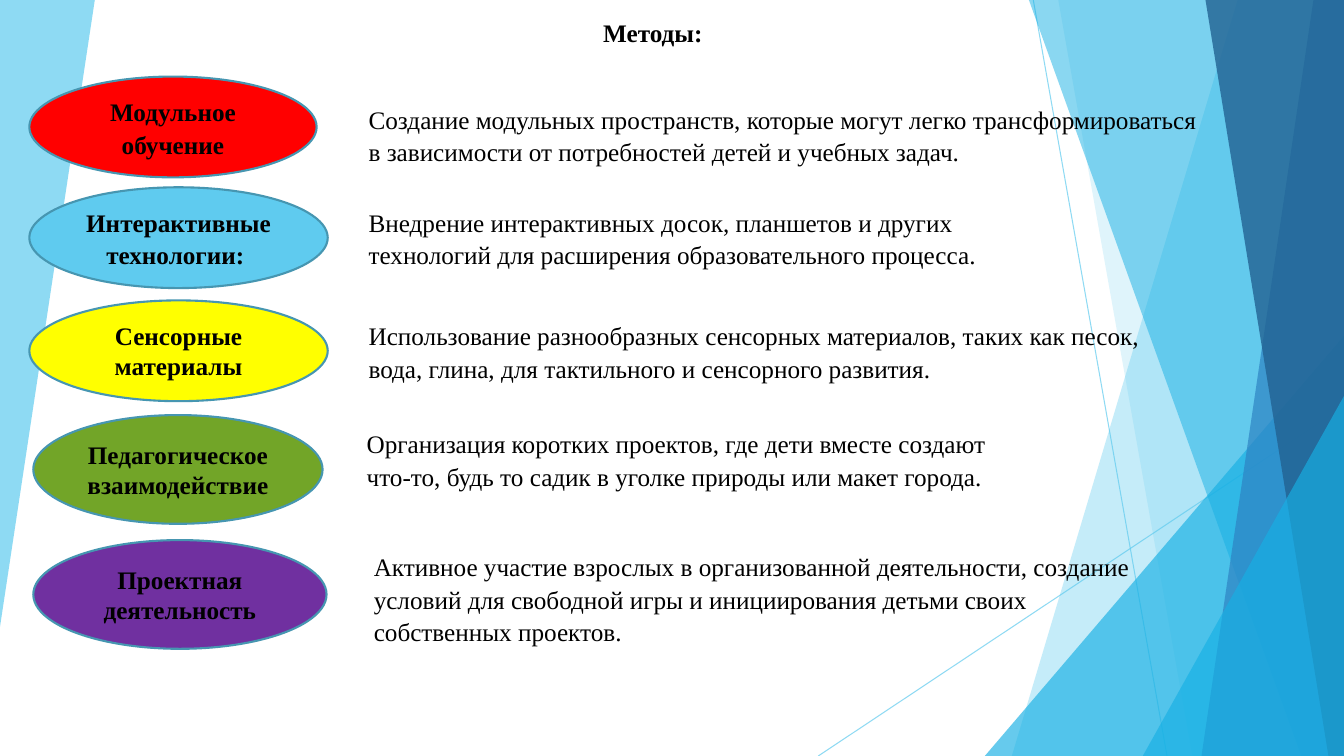
from lxml import etree
from pptx import Presentation
from pptx import util as u
from pptx.dml.color import RGBColor
from pptx.enum import shapes, text
from pptx.oxml.ns import qn

COLORS = {
    "sky": "5FCBEF", "cyan": "17B0E4", "blue": "2E83C3", "navy": "226292",
    "outline": "4696B1", "red": "FF0000", "yellow": "FFFF00",
    "green": "72A528", "purple": "7030A0", "black": "000000",
}
FONT = "Times New Roman"
WIDTH, HEIGHT = 33.87, 19.05
LOOSE = {"line_spacing": 1.07, "space_after": u.Pt(8)}

# Oval: label, colour, left, top, width, height, paragraph spacing
# Description: left, top, width, height, wording
METHODS = [
    (("Модульное обучение", "red", 0.74, 1.93, 7.24, 2.54, LOOSE),
     (9.04, 2.44, 21.56, 1.85,
      "Создание модульных пространств, которые могут легко трансформироваться "
      "в зависимости от потребностей детей и учебных задач.")),
    (("Интерактивные технологии: ", "sky", 0.74, 4.72, 7.52, 2.54, LOOSE),
     (9.04, 5.05, 16.94, 1.85,
      "Внедрение интерактивных досок, планшетов и других "
      "технологий для расширения образовательного процесса.")),
    (("Сенсорные материалы", "yellow", 0.74, 7.57, 7.52, 2.54, {}),
     (9.04, 7.9, 20.19, 1.85,
      "Использование разнообразных сенсорных материалов, таких как песок, "
      "вода, глина, для тактильного и сенсорного развития.")),
    (("Педагогическое взаимодействие", "green", 0.84, 10.46, 7.29, 2.74, {}),
     (8.99, 10.62, 16.94, 1.85,
      "Организация коротких проектов, где дети вместе создают "
      "что-то, будь то садик в уголке природы или макет города.")),
    (("Проектная деятельность", "purple", 0.84, 13.61, 7.39, 2.74, {}),
     (9.17, 13.72, 20.19, 2.69,
      "Активное участие взрослых в организованной деятельности, создание "
      "условий для свободной игры и инициирования детьми своих "
      "собственных проектов.")),
]


def rgb(name):
    return RGBColor.from_string(COLORS[name])


def paint(fill, color, opacity=100):
    """Set a solid colour; opacity is a percentage."""
    fill.solid()
    fill.fore_color.rgb = rgb(color)
    if opacity < 100:
        tint = fill._xPr.find(qn("a:solidFill"))[0]
        etree.SubElement(tint, qn("a:alpha")).set("val", str(opacity * 1000))


def finish_facet(shape, color, opacity):
    shape.shadow.inherit = False
    shape.line.fill.background()
    paint(shape.fill, color, opacity)


def add_facet(page, points, color, opacity):
    """Draw a translucent polygon through points given in centimetres."""
    corners = [(u.Cm(x), u.Cm(y)) for x, y in points]
    builder = page.shapes.build_freeform(*corners[0])
    builder.add_line_segments(corners[1:], close=True)
    finish_facet(builder.convert_to_shape(), color, opacity)


def add_right_facet(page, top_left, bottom_left, color, opacity):
    """Draw a full-height facet that reaches the right edge of the slide."""
    points = [(top_left, 0), (WIDTH, 0), (WIDTH, HEIGHT), (bottom_left, HEIGHT)]
    add_facet(page, points, color, opacity)


def add_corner_triangle(page, left, top):
    """Fill the bottom right corner from the given left and top."""
    shape = page.shapes.add_shape(
        shapes.MSO_SHAPE.ISOSCELES_TRIANGLE, u.Cm(left), u.Cm(top),
        u.Cm(WIDTH - left), u.Cm(HEIGHT - top))
    shape.adjustments[0] = 1
    finish_facet(shape, "cyan", 66)


def add_thin_line(page, *ends):
    line = page.shapes.add_connector(
        shapes.MSO_CONNECTOR.STRAIGHT, *(u.Cm(end) for end in ends))
    line.line.width = u.Pt(0.75)
    paint(line.line.fill, "sky", 70)
    etree.SubElement(line._element.spPr, qn("a:effectLst"))


def write(shape, wording, bold=False, centered=False, spacing=None):
    frame = shape.text_frame
    frame.word_wrap = True
    para = frame.paragraphs[0]
    para.alignment = text.PP_ALIGN.CENTER if centered else text.PP_ALIGN.LEFT
    for name, value in (spacing or {}).items():
        setattr(para, name, value)
    span = para.add_run()
    span.text = wording
    span.font.name = FONT
    span.font.size = u.Pt(18)
    span.font.bold = bold
    span.font.color.rgb = rgb("black")


def add_text(page, left, top, width, height, wording, **style):
    box = page.shapes.add_textbox(*(u.Cm(n) for n in (left, top, width, height)))
    write(box, wording, **style)


def add_oval(page, label, color, left, top, width, height, spacing):
    oval = page.shapes.add_shape(
        shapes.MSO_SHAPE.FLOWCHART_CONNECTOR,
        *(u.Cm(n) for n in (left, top, width, height)))
    oval.shadow.inherit = False
    paint(oval.fill, color)
    oval.line.color.rgb = rgb("outline")
    oval.line.width = u.Pt(1.5)
    oval.text_frame.vertical_anchor = text.MSO_ANCHOR.MIDDLE
    write(oval, label, bold=True, centered=True, spacing=spacing)


def add_backdrop(page):
    add_facet(page, [(0, 0), (2.39, 0), (0, 15.8)], "sky", 70)
    add_thin_line(page, 26.04, 0, 29.41, HEIGHT)
    add_thin_line(page, WIDTH, 10.24, 20.62, HEIGHT)
    add_right_facet(page, 31.19, 25.5, "sky", 36)
    add_right_facet(page, 26.67, 30.05, "sky", 20)
    add_corner_triangle(page, 24.82, 8.46)
    add_right_facet(page, 25.93, 32.79, "cyan", 50)
    add_right_facet(page, 33.1, 30.28, "blue", 70)
    add_right_facet(page, 30.38, 33.48, "navy", 80)
    add_corner_triangle(page, 28.8, 9.98)


def main():
    deck = Presentation()
    deck.slide_width, deck.slide_height = u.Cm(WIDTH), u.Cm(HEIGHT)
    page = deck.slides.add_slide(deck.slide_layouts[6])
    add_backdrop(page)
    add_text(page, 1.24, 0.3, 30.43, 17.55, "Методы:", bold=True, centered=True)
    for oval, description in METHODS:
        add_oval(page, *oval)
        add_text(page, *description, spacing=LOOSE)
    deck.save("out.pptx")


if __name__ == "__main__":
    main()
